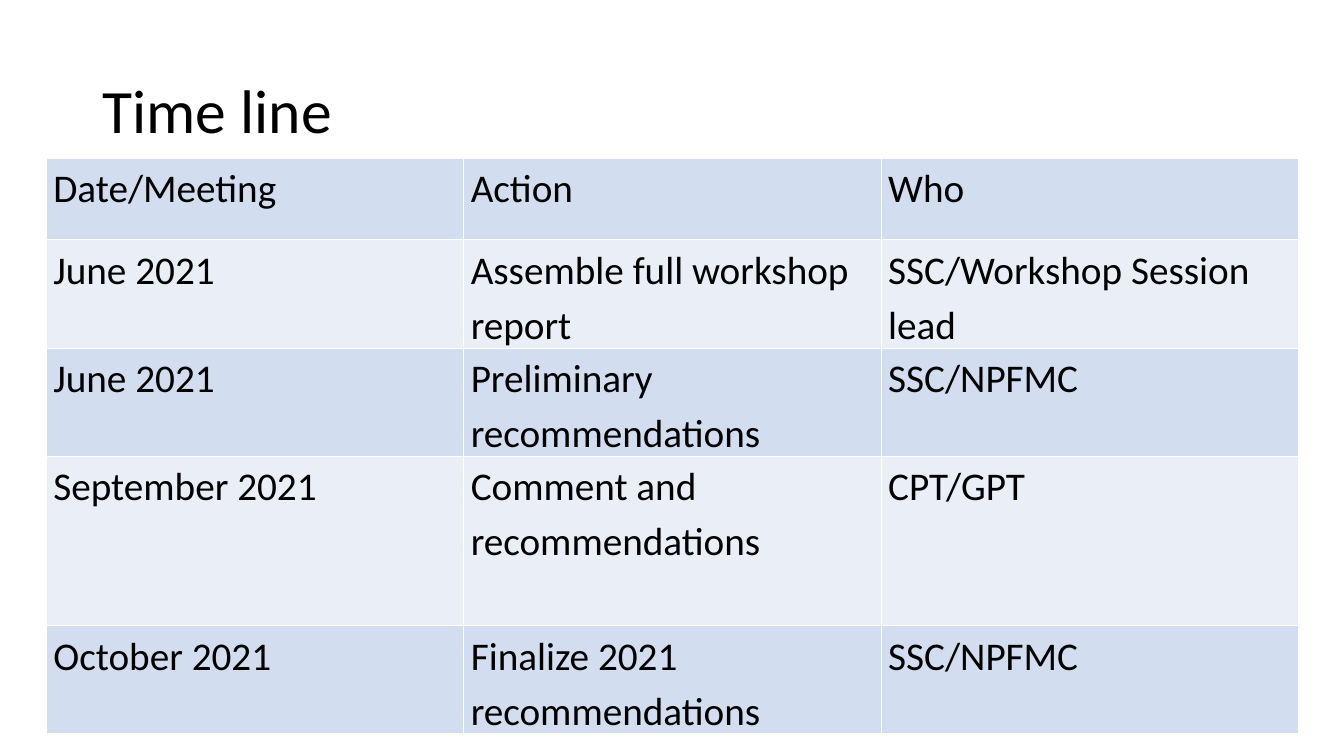
from dataclasses import dataclass

from lxml import etree
from pptx import Presentation
from pptx import util as u
from pptx.dml import color
from pptx.enum import text
from pptx.oxml import ns
from pptx.slide import Slide
from pptx.table import _Cell
from pptx.text.text import TextFrame


@dataclass(frozen=True)
class Theme:
    font: str = "Calibri"
    ink: str = "000000"
    border: str = "FFFFFF"
    bands: tuple[str, str] = ("D2DEEF", "EAEFF7")
    title_size: int = 44
    table_size: int = 28
    border_width: int = 1


@dataclass(frozen=True)
class Milestone:
    date: str
    action: str
    who: str
    height: float = 0.81


THEME = Theme()
COLUMN_WIDTH = 4.14
MILESTONES = [
    Milestone("Date/Meeting", "Action", "Who"),
    Milestone("June 2021", "Assemble full workshop report", "SSC/Workshop Session lead"),
    Milestone("June 2021", "Preliminary recommendations", "SSC/NPFMC"),
    Milestone("September 2021", "Comment and recommendations", "CPT/GPT", height=1.68),
    Milestone("October 2021", "Finalize 2021 recommendations", "SSC/NPFMC"),
]


def write_text(frame: TextFrame, words: str, *, size: int, line_spacing: float) -> None:
    frame.word_wrap = True
    para = frame.paragraphs[0]
    para.alignment = text.PP_ALIGN.LEFT
    para.line_spacing = line_spacing
    span = para.add_run()
    span.text = words
    span.font.name = THEME.font
    span.font.size = u.Pt(size)
    span.font.color.rgb = color.RGBColor.from_string(THEME.ink)


def add_borders(cell: _Cell) -> None:
    """Line all four sides; the lines must precede the fill in the cell's XML."""
    properties = cell._tc.get_or_add_tcPr()
    for index, side in enumerate(("lnL", "lnR", "lnT", "lnB")):
        line = etree.Element(ns.qn(f"a:{side}"), w=str(u.Pt(THEME.border_width)))
        fill = etree.SubElement(line, ns.qn("a:solidFill"))
        etree.SubElement(fill, ns.qn("a:srgbClr"), val=THEME.border)
        properties.insert(index, line)


def format_cell(cell: _Cell, words: str, fill: str) -> None:
    cell.margin_left = cell.margin_right = u.Inches(0.07)
    cell.margin_top = cell.margin_bottom = u.Inches(0)
    cell.vertical_anchor = text.MSO_ANCHOR.TOP
    cell.fill.solid()
    cell.fill.fore_color.rgb = color.RGBColor.from_string(fill)
    add_borders(cell)
    write_text(cell.text_frame, words, size=THEME.table_size, line_spacing=1.15)


def add_title(page: Slide, words: str) -> None:
    box = page.shapes.add_textbox(
        u.Inches(0.92), u.Inches(0.4), u.Inches(11.5), u.Inches(1.45)
    )
    box.text_frame.vertical_anchor = text.MSO_ANCHOR.MIDDLE
    write_text(box.text_frame, words, size=THEME.title_size, line_spacing=0.9)


def add_timeline(page: Slide, milestones: list[Milestone]) -> None:
    table = page.shapes.add_table(
        len(milestones), 3, u.Inches(0.46), u.Inches(1.57),
        u.Inches(3 * COLUMN_WIDTH), u.Inches(sum(item.height for item in milestones)),
    ).table
    table.first_row = False
    table.horz_banding = False
    for column in table.columns:
        column.width = u.Inches(COLUMN_WIDTH)
    for index, (row, item) in enumerate(zip(table.rows, milestones)):
        row.height = u.Inches(item.height)
        for cell, words in zip(row.cells, (item.date, item.action, item.who)):
            format_cell(cell, words, THEME.bands[index % 2])


def main() -> None:
    deck = Presentation()
    deck.slide_width = u.Inches(13.33)
    deck.slide_height = u.Inches(7.5)
    page = deck.slides.add_slide(deck.slide_layouts[6])
    add_title(page, "Time line")
    add_timeline(page, MILESTONES)
    deck.save("out.pptx")


if __name__ == "__main__":
    main()
